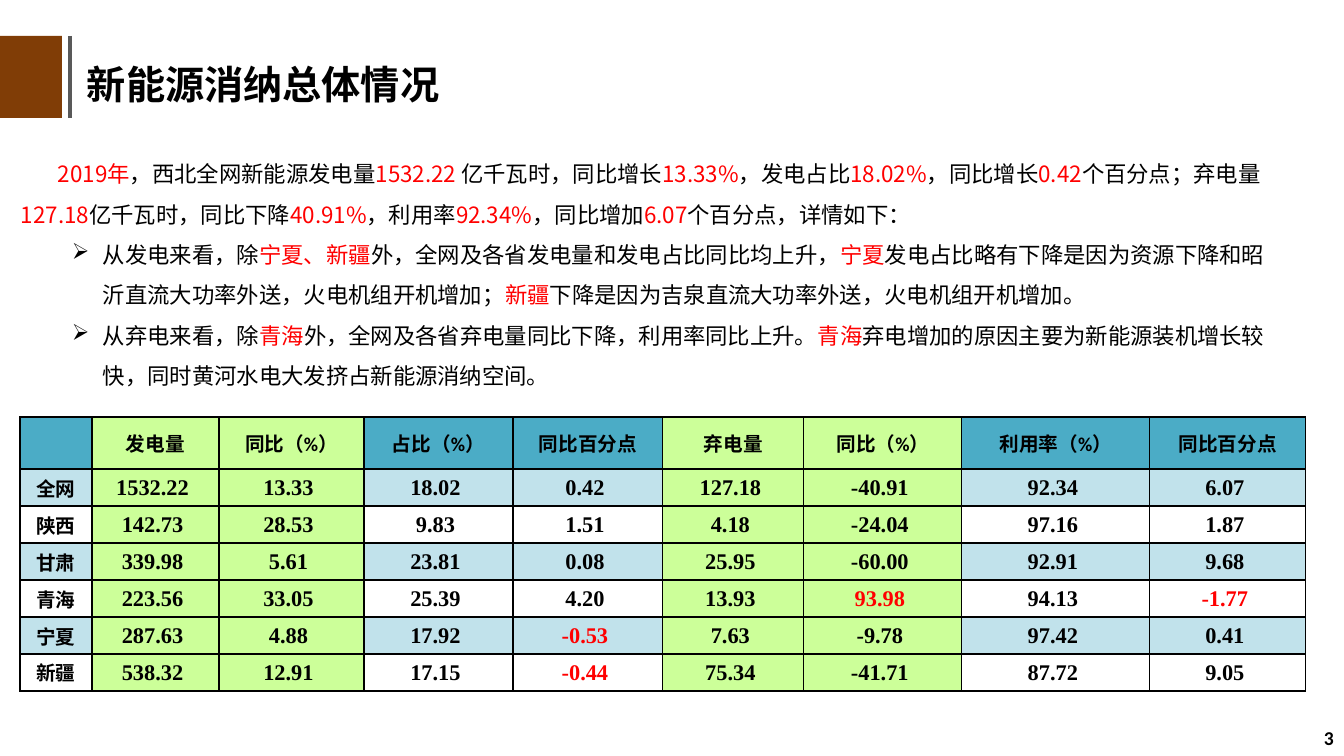
"""Build the slide on overall renewable energy consumption."""
import dataclasses
import typing

import pptx
import pptx.dml.color
import pptx.enum.shapes
import pptx.enum.text
import pptx.oxml
import pptx.oxml.ns
import pptx.shapes.shapetree
import pptx.slide
import pptx.table
import pptx.text.text
import pptx.util

EMU_PER_PX = 914400 / 100.8
BLACK = pptx.dml.color.RGBColor(0x00, 0x00, 0x00)
RED = pptx.dml.color.RGBColor(0xFF, 0x00, 0x00)
BROWN = pptx.dml.color.RGBColor(0x80, 0x3D, 0x06)
GRAY = pptx.dml.color.RGBColor(0x59, 0x59, 0x59)
TEAL = pptx.dml.color.RGBColor(0x4B, 0xAC, 0xC6)
GREEN = pptx.dml.color.RGBColor(0xCC, 0xFF, 0x99)
CJK_FONT = "Noto Sans CJK SC"
NAMESPACE = pptx.oxml.ns.nsdecls("a")
ALIGN = pptx.enum.text.PP_ALIGN
ANCHOR = pptx.enum.text.MSO_ANCHOR

TABLE_LEFT, TABLE_TOP = 20, 417
COLUMN_WIDTHS = [72, 127, 145, 149, 150, 141, 158, 188, 156]
HEADER_HEIGHT, ROW_HEIGHT = 52, 37
GREEN_COLUMNS = {1, 2, 5, 6}
TABLE_ROWS = [
    ["", "发电量", "同比（%）", "占比（%）", "同比百分点", "弃电量", "同比（%）", "利用率（%）", "同比百分点"],
    ["全网", "1532.22", "13.33", "18.02", "0.42", "127.18", "-40.91", "92.34", "6.07"],
    ["陕西", "142.73", "28.53", "9.83", "1.51", "4.18", "-24.04", "97.16", "1.87"],
    ["甘肃", "339.98", "5.61", "23.81", "0.08", "25.95", "-60.00", "92.91", "9.68"],
    ["青海", "223.56", "33.05", "25.39", "4.20", "13.93", "|93.98|", "94.13", "|-1.77|"],
    ["宁夏", "287.63", "4.88", "17.92", "|-0.53|", "7.63", "-9.78", "97.42", "0.41"],
    ["新疆", "538.32", "12.91", "17.15", "|-0.44|", "75.34", "-41.71", "87.72", "9.05"],
]


@dataclasses.dataclass(frozen=True)
class TextStyle:
    """Font and alignment of a paragraph."""
    size: int
    font: str
    bold: bool = True
    align: ALIGN = ALIGN.LEFT


@dataclasses.dataclass(frozen=True)
class Paragraph:
    """Text with red parts between bars, and its indents in px."""
    text: str
    margin: int = 0
    indent: int = 0
    bullet: str = ""
    line_points: float = 0


@dataclasses.dataclass(frozen=True)
class TextBlock:
    """A text box with its place in px."""
    left: int
    top: int
    width: int
    height: int
    style: TextStyle
    paragraphs: list[Paragraph]
    anchor: ANCHOR = ANCHOR.MIDDLE
    top_inset: int = 5


HEADER_STYLE = TextStyle(14, "Calibri", align=ALIGN.CENTER)
NUMBER_STYLE = TextStyle(16, "Times New Roman", align=ALIGN.CENTER)
BODY_LINE = 28.8
BULLET = {"margin": 82, "indent": -31, "bullet": "➢", "line_points": BODY_LINE}
TEXT_BLOCKS = [
    TextBlock(1030, 720, 314, 36, TextStyle(14, "Calibri", align=ALIGN.RIGHT), [Paragraph("3")]),
    TextBlock(77, 55, 689, 57, TextStyle(28, CJK_FONT), [Paragraph("新能源消纳总体情况")]),
    TextBlock(11, 137, 1268, 259, TextStyle(16, CJK_FONT, bold=False), [
        Paragraph(
            "|2019年|，西北全网新能源发电量|1532.22 |亿千瓦时，同比增长|13.33%|，发电占比|18.02%|"
            "，同比增长|0.42|个百分点；弃电量|127.18|亿千瓦时，同比下降|40.91%|，利用率|92.34%|"
            "，同比增加|6.07|个百分点，详情如下：", indent=37, line_points=BODY_LINE),
        Paragraph(
            "从发电来看，除|宁夏、新疆|外，全网及各省发电量和发电占比同比均上升，|宁夏|发电占比略有下降是因为"
            "资源下降和昭沂直流大功率外送，火电机组开机增加；|新疆|下降是因为吉泉直流大功率外送，火电机组开机增加。",
            **BULLET),
        Paragraph(
            "从弃电来看，除|青海|外，全网及各省弃电量同比下降，利用率同比上升。|青海|弃电增加的原因主要为"
            "新能源装机增长较快，同时黄河水电大发挤占新能源消纳空间。", **BULLET),
    ], ANCHOR.TOP, 10),
]


def px(length: int) -> pptx.util.Emu:
    """Turn px into EMU."""
    return pptx.util.Emu(round(length * EMU_PER_PX))


def apply_format(target: typing.Any, values: dict[str, typing.Any]) -> None:
    """Set each named attribute on the target."""
    for name, value in values.items():
        setattr(target, name, value)


def write_paragraph(para: pptx.text.text._Paragraph, content: Paragraph, style: TextStyle) -> None:
    """Fill one paragraph with black and red spans."""
    para.alignment = style.align
    if content.line_points:
        para.line_spacing = pptx.util.Pt(content.line_points)
    properties = para._p.get_or_add_pPr()
    properties.set("marL", str(px(content.margin)))
    properties.set("indent", str(px(content.indent)))
    if content.bullet:
        properties.append(pptx.oxml.parse_xml(f'<a:buChar {NAMESPACE} char="{content.bullet}"/>'))
    for index, piece in enumerate(content.text.split("|")):
        if not piece:
            continue
        span = para.add_run()
        span.text = piece
        apply_format(span.font, {"size": pptx.util.Pt(style.size), "name": style.font, "bold": style.bold})
        span.font.color.rgb = RED if index % 2 else BLACK
        east_asian = pptx.oxml.parse_xml(f'<a:ea {NAMESPACE} typeface="{CJK_FONT}"/>')
        span._r.get_or_add_rPr().append(east_asian)


def draw_text(page: pptx.slide.Slide, block: TextBlock) -> None:
    """Add one text box."""
    box = page.shapes.add_textbox(px(block.left), px(block.top), px(block.width), px(block.height))
    frame = box.text_frame
    apply_format(frame, {"word_wrap": True, "vertical_anchor": block.anchor, "margin_left": px(10),
                         "margin_right": px(10), "margin_top": px(block.top_inset), "margin_bottom": px(5)})
    for index, content in enumerate(block.paragraphs):
        para = frame.add_paragraph() if index else frame.paragraphs[0]
        write_paragraph(para, content, block.style)


def draw_title_mark(page: pptx.slide.Slide) -> None:
    """Add the brown block and the upright line beside the title."""
    mark = page.shapes.add_group_shape()
    block = mark.shapes.add_shape(pptx.enum.shapes.MSO_SHAPE.RECTANGLE, px(0), px(36), px(62), px(82))
    block.shadow.inherit = False
    block.fill.solid()
    block.fill.fore_color.rgb = BROWN
    block.line.fill.background()
    rule = mark.shapes.add_connector(pptx.enum.shapes.MSO_CONNECTOR.STRAIGHT, px(70), px(36), px(70), px(118))
    rule.line.color.rgb = GRAY
    rule.line.width = pptx.util.Pt(2.25)
    rule._element.spPr.append(pptx.oxml.parse_xml(f"<a:effectLst {NAMESPACE}/>"))


def paint_cell(cell: pptx.table._Cell, row: int, column: int) -> None:
    """Give a cell its borders and its fill."""
    properties = cell._tc.get_or_add_tcPr()
    for side in "LRTB":
        properties.append(pptx.oxml.parse_xml(
            f'<a:ln{side} {NAMESPACE} w="{pptx.util.Pt(1)}"><a:solidFill>'
            f'<a:srgbClr val="{BLACK}"/></a:solidFill></a:ln{side}>'))
    green = column in GREEN_COLUMNS
    if row and row % 2 == 0 and not green:
        cell.fill.background()
        return
    cell.fill.solid()
    cell.fill.fore_color.rgb = GREEN if green else TEAL
    if row and not green:
        color = properties.find(pptx.oxml.ns.qn("a:solidFill"))[0]
        color.append(pptx.oxml.parse_xml(f'<a:alpha {NAMESPACE} val="34000"/>'))


def draw_table(page: pptx.slide.Slide) -> None:
    """Add the table of provinces."""
    heights = [HEADER_HEIGHT] + [ROW_HEIGHT] * (len(TABLE_ROWS) - 1)
    table = page.shapes.add_table(len(heights), len(COLUMN_WIDTHS), px(TABLE_LEFT), px(TABLE_TOP),
                                  px(sum(COLUMN_WIDTHS)), px(sum(heights))).table
    apply_format(table, {"first_row": False, "horz_banding": False})
    for column, width in zip(table.columns, COLUMN_WIDTHS):
        column.width = px(width)
    for row, (height, texts) in enumerate(zip(heights, TABLE_ROWS)):
        table.rows[row].height = px(height)
        for column, text in enumerate(texts):
            cell = table.cell(row, column)
            is_number = row > 0 and column > 0
            apply_format(cell, {"vertical_anchor": ANCHOR.MIDDLE, "margin_left": 0, "margin_top": 0,
                                "margin_right": px(6 if is_number else 0), "margin_bottom": 0})
            style = NUMBER_STYLE if is_number else HEADER_STYLE
            write_paragraph(cell.text_frame.paragraphs[0], Paragraph(text), style)
            paint_cell(cell, row, column)


def main() -> None:
    """Build and save the deck."""
    deck = pptx.Presentation()
    apply_format(deck, {"slide_width": px(1344), "slide_height": px(756)})
    page = deck.slides.add_slide(deck.slide_layouts[6])
    draw_title_mark(page)
    for block in TEXT_BLOCKS:
        draw_text(page, block)
    draw_table(page)
    deck.save("out.pptx")


if __name__ == "__main__":
    main()
